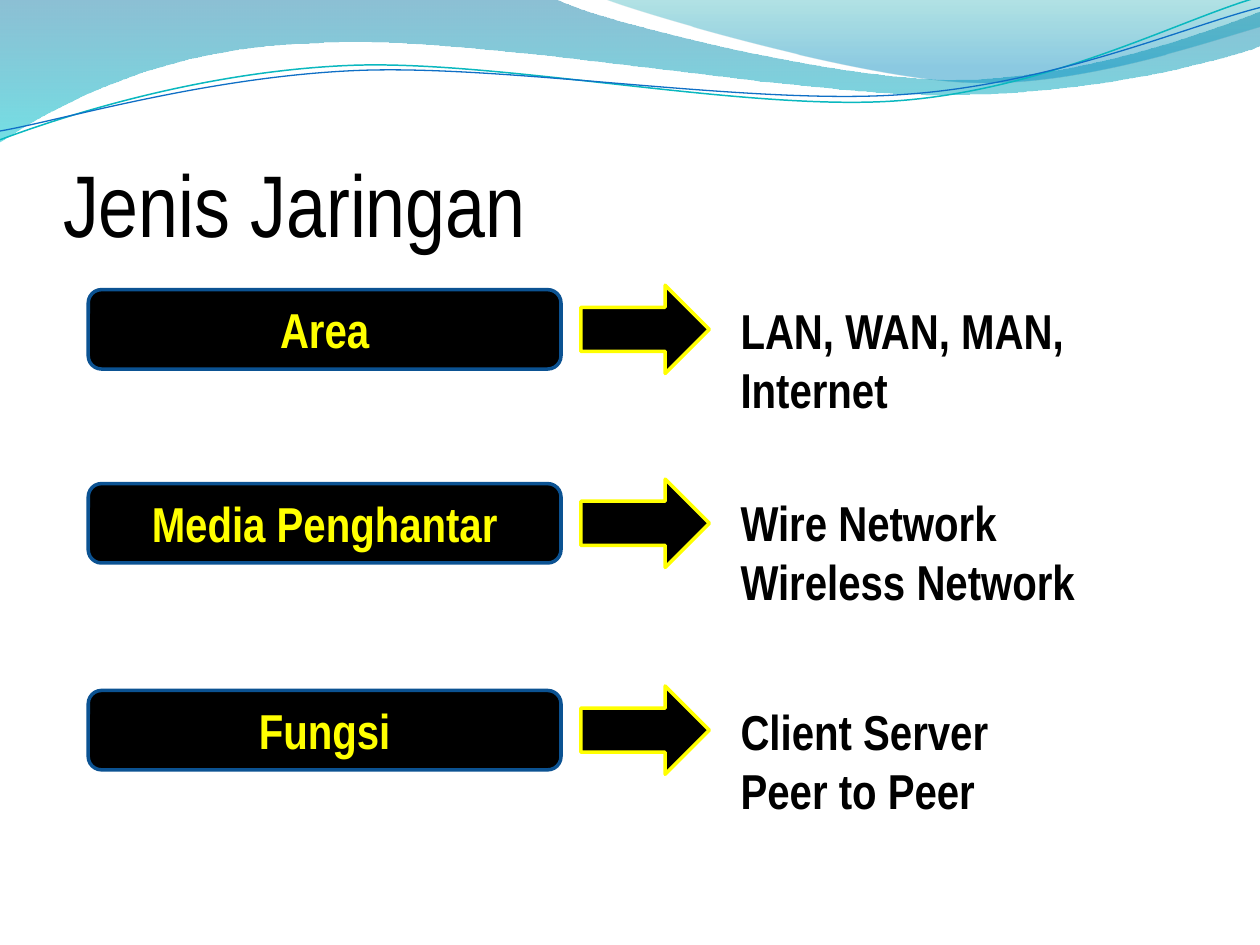
from pptx import Presentation
from pptx.dml.color import RGBColor
from pptx.enum.shapes import MSO_SHAPE
from pptx.enum.text import MSO_ANCHOR, PP_ALIGN
from pptx.oxml.ns import qn
from pptx.util import Cm, Pt
from lxml.etree import SubElement

FONT = "Arial Narrow"
COLORS = {
    "black": "000000", "yellow": "FFFF00", "box_edge": "0B5292",
    "deep_blue": "0074A1", "turquoise": "00C6CF", "teal": "00A1A9",
    "sky": "008BBF", "teal_line": "0AB8BF", "blue_line": "0F6FC6",
}
WAVE_UNIT = Cm(2.54)

# Each wave is a start point, then lines (x, y) and Bézier curves (two controls, end).
BROAD_WAVE = ((0, 0), [
    (4.4, -0.01), (4.76, 0.17, 6.64, 0.63, 7.58, 0.63),
    (8.53, 0.63, 9.58, 0.26, 10, 0.09), (10.01, 0.36),
    (9.83, 0.44, 8.7, 0.76, 7.46, 0.75), (6.22, 0.75, 3.82, 0.28, 2.57, 0.34),
    (1.29, 0.36, 0.46, 0.83, -0.01, 1.13)])
RIGHT_WAVE = ((4.79, -0.01), [
    (5.09, 0.11, 6.82, 0.62, 7.69, 0.65), (8.56, 0.69, 9.61, 0.32, 10, 0.21), (10, 0)])
TEAL_THREAD = ((0, 1.11), [
    (0.48, 0.93, 1.58, 0.57, 2.77, 0.52), (3.95, 0.47, 5.93, 0.89, 7.13, 0.8),
    (8.33, 0.71, 9.38, 0.15, 9.98, -0.02)])
BLUE_THREAD = ((0, 1.04), [
    (0.47, 0.96, 1.64, 0.61, 2.83, 0.56), (4.03, 0.51, 5.97, 0.84, 7.17, 0.75),
    (8.36, 0.67, 9.41, 0.21, 10, 0.06)])

# Label, details, top of the row and drop of the details, in centimetres
NETWORK_TYPES = [
    ("Area", "LAN, WAN, MAN, Internet", 5.84, 0.1),
    ("Media Penghantar", "Wire Network\nWireless Network", 9.75, 0.05),
    ("Fungsi", "Client Server\nPeer to Peer", 13.92, 0.1),
]


def rgb(name):
    return RGBColor.from_string(COLORS[name])


def format_text(frame, size, color, bold=None, align=None):
    for paragraph in frame.paragraphs:
        paragraph.alignment = align
        for run in paragraph.runs:
            run.font.name = FONT
            run.font.size = Pt(size)
            run.font.bold = bold
            run.font.color.rgb = rgb(color)


def style_shape(shape, fill, edge):
    shape.shadow.inherit = False
    shape.fill.solid()
    shape.fill.fore_color.rgb = rgb(fill)
    shape.line.color.rgb = rgb(edge)
    shape.line.width = Pt(2)


def to_emu(values):
    return [round(value * WAVE_UNIT) for value in values]


def bend(wave, segments):
    """Turn the straight segments that have control points into Bézier curves."""
    straight_lines = list(wave.element.spPr.iter(qn("a:lnTo")))
    for line, segment in zip(straight_lines, segments):
        if len(segment) == 2:
            continue
        line.tag = qn("a:cubicBezTo")
        line.remove(line[0])
        for x, y in zip(segment[::2], segment[1::2]):
            SubElement(line, qn("a:pt"), x=str(x - wave.left), y=str(y - wave.top))


def add_wave(shapes, outline, close):
    start, segments = to_emu(outline[0]), [to_emu(segment) for segment in outline[1]]
    builder = shapes.build_freeform(*start)
    builder.add_line_segments([segment[-2:] for segment in segments], close=close)
    wave = builder.convert_to_shape()
    bend(wave, segments)
    wave.shadow.inherit = False
    return wave


def add_filled_wave(shapes, outline, stops):
    """Each stop is a position, a colour name and an opacity in percent."""
    wave = add_wave(shapes, outline, close=True)
    wave.line.fill.background()
    wave.fill.gradient()
    wave.fill.gradient_angle = 270
    for stop, (position, color, _) in zip(wave.fill.gradient_stops, stops):
        stop.position = position
        stop.color.rgb = rgb(color)
    for node, (_, _, opacity) in zip(wave.element.spPr.iter(qn("a:srgbClr")), stops):
        SubElement(node, qn("a:alpha"), val=str(opacity * 1000))


def add_thread(shapes, outline, color, width):
    thread = add_wave(shapes, outline, close=False)
    thread.fill.background()
    thread.line.color.rgb = rgb(color)
    thread.line.width = Pt(width)


def add_header_waves(shapes):
    add_filled_wave(shapes, BROAD_WAVE, [(0, "deep_blue", 45), (1, "turquoise", 55)])
    add_filled_wave(shapes, RIGHT_WAVE, [(0, "teal", 30), (0.8, "sky", 45)])
    threads = shapes.add_group_shape().shapes
    add_thread(threads, TEAL_THREAD, "teal_line", 0.85)
    add_thread(threads, BLUE_THREAD, "blue_line", 0.75)


def set_title(title, left, top, width, height):
    title.left, title.top, title.width, title.height = left, top, width, height
    frame = title.text_frame
    frame.text = "Jenis Jaringan"
    frame.vertical_anchor = MSO_ANCHOR.BOTTOM
    frame.margin_left = frame.margin_right = frame.margin_bottom = 0
    format_text(frame, 50, "black", align=PP_ALIGN.LEFT)


def add_network_type(shapes, left, top, label, details, drop):
    """Place a label box, an arrow and the details in one row."""
    pair = shapes.add_group_shape().shapes
    box = pair.add_shape(MSO_SHAPE.ROUNDED_RECTANGLE, left, top, Cm(9.53), Cm(1.6))
    style_shape(box, "black", "box_edge")
    box.text_frame.text = label
    box.text_frame.vertical_anchor = MSO_ANCHOR.MIDDLE
    format_text(box.text_frame, 28, "yellow", True, PP_ALIGN.CENTER)

    arrow = pair.add_shape(MSO_SHAPE.RIGHT_ARROW, left + Cm(9.93), top - Cm(0.09),
                           Cm(2.59), Cm(1.78))
    style_shape(arrow, "black", "yellow")

    frame = shapes.add_textbox(left + Cm(12.9), top + drop, Cm(8.94), Cm(2.64)).text_frame
    frame.word_wrap = True
    frame.text = details
    format_text(frame, 28, "black", True)


def main():
    deck = Presentation()
    deck.slide_width, deck.slide_height = Cm(25.4), Cm(19.05)
    slide = deck.slides.add_slide(deck.slide_layouts[5])
    add_header_waves(slide.shapes)
    set_title(slide.shapes.title, Cm(1.27), Cm(1.96), Cm(22.86), Cm(3.18))
    for label, details, top, drop in NETWORK_TYPES:
        add_network_type(slide.shapes, Cm(1.78), Cm(top), label, details, Cm(drop))
    deck.save("out.pptx")


if __name__ == "__main__":
    main()
